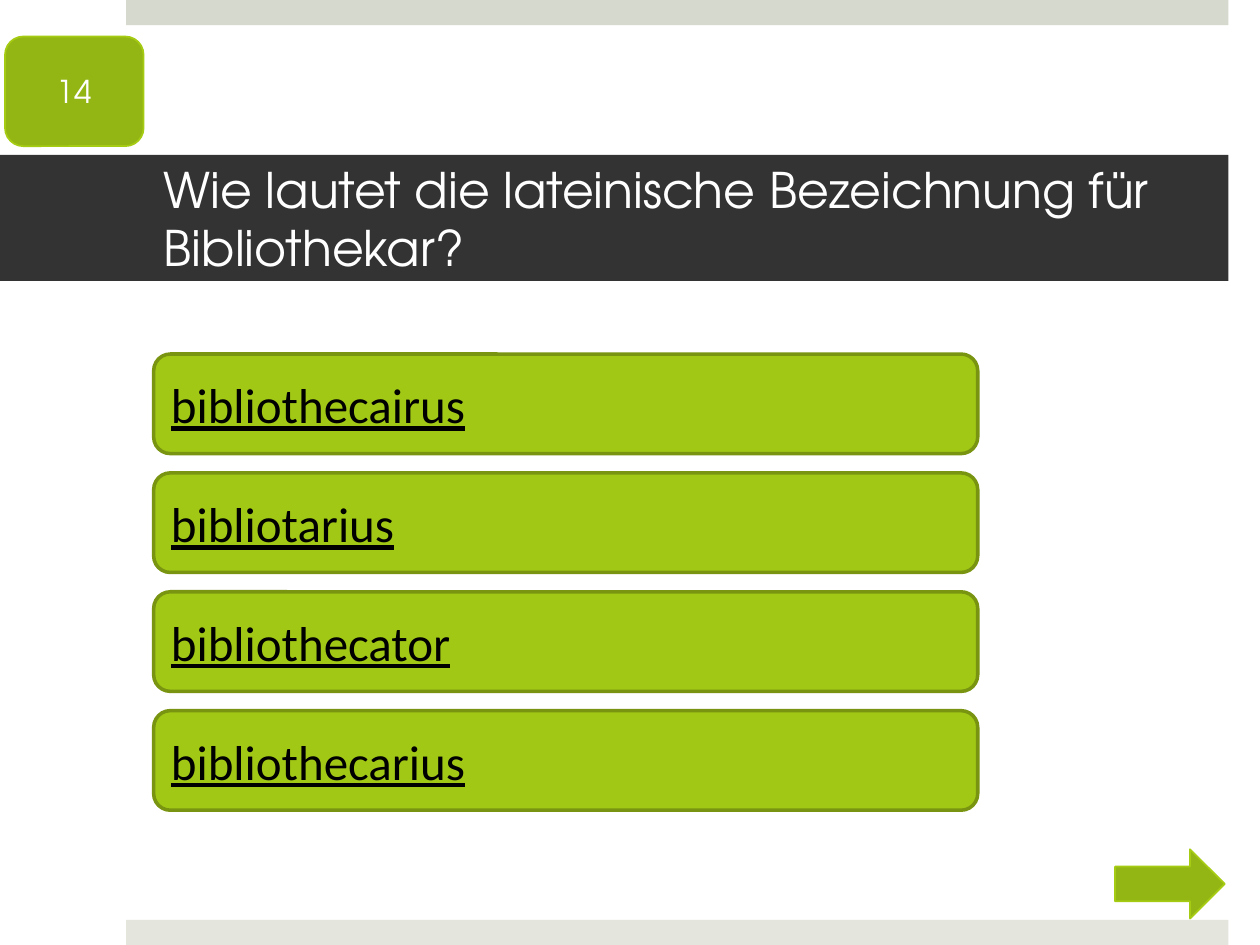
import pptx
import pptx.util
from dataclasses import dataclass
from pptx.dml.color import RGBColor
from pptx.enum.shapes import MSO_SHAPE
from pptx.enum.text import MSO_ANCHOR, MSO_AUTO_SIZE, PP_ALIGN

Inches = pptx.util.Inches
Pt = pptx.util.Pt


@dataclass(frozen=True)
class Theme:
    top_bar: str = "D6D9CD"
    bottom_bar: str = "E4E6DE"
    title_band: str = "333333"
    answer_fill: str = "A2C816"
    answer_line: str = "789410"
    accent_fill: str = "93B614"
    accent_line: str = "A5CC12"
    light: str = "FFFFFF"
    dark: str = "000000"
    heading_font: str = "TeX Gyre Adventor"
    body_font: str = "Calibri"
    large: int = 28
    small: int = 18


class QuizSlide:
    """Holds the theme and the slide being built."""

    def __init__(self, prs, theme):
        self.theme = theme
        self.slide = prs.slides.add_slide(prs.slide_layouts[5])

    def fill(self, sp, color):
        sp.fill.solid()
        sp.fill.fore_color.rgb = RGBColor.from_string(color)

    def set_text(self, sp, text, color, align=PP_ALIGN.LEFT, **font):
        tf = sp.text_frame
        frame = {"word_wrap": True, "auto_size": MSO_AUTO_SIZE.NONE,
                 "vertical_anchor": MSO_ANCHOR.MIDDLE}
        for name, value in frame.items():
            setattr(tf, name, value)
        p = tf.paragraphs[0]
        p.alignment = align
        r = p.add_run()
        r.text = text
        for name, value in font.items():
            setattr(r.font, name, value)
        r.font.color.rgb = RGBColor.from_string(color)

    def shape(self, kind, box, color, line=None, width=1):
        sp = self.slide.shapes.add_shape(kind, *map(Inches, box))
        sp.shadow.inherit = False
        self.fill(sp, color)
        if line:
            sp.line.color.rgb = RGBColor.from_string(line)
            sp.line.width = Pt(width)
        else:
            sp.line.fill.background()
        return sp

    def bar(self, top, color):
        self.shape(MSO_SHAPE.RECTANGLE, (1, top, 8.75, 0.2), color)

    def title(self, text):
        t = self.theme
        sp = self.slide.shapes.title
        sp.left, sp.top, sp.width, sp.height = map(Inches, (0, 1.23, 9.75, 1))
        self.fill(sp, t.title_band)
        margins = {"left": 1.3, "top": 0.05, "right": 0.3, "bottom": 0.05}
        for side, value in margins.items():
            setattr(sp.text_frame, f"margin_{side}", Inches(value))
        self.set_text(sp, text, t.light, name=t.heading_font, size=Pt(t.large))

    def answer(self, top, text):
        t = self.theme
        sp = self.shape(MSO_SHAPE.ROUNDED_RECTANGLE, (1.22, top, 6.54, 0.79),
                        t.answer_fill, t.answer_line, 2)
        self.set_text(sp, text, t.dark, name=t.body_font, size=Pt(t.large),
                      underline=True)

    def badge(self, text):
        t = self.theme
        sp = self.shape(MSO_SHAPE.ROUNDED_RECTANGLE, (0.04, 0.29, 1.1, 0.87),
                        t.accent_fill, t.accent_line)
        self.set_text(sp, text, t.light, PP_ALIGN.CENTER,
                      name=t.heading_font, size=Pt(t.small))

    def next_arrow(self):
        self.shape(MSO_SHAPE.RIGHT_ARROW, (8.85, 6.74, 0.87, 0.55),
                   self.theme.accent_fill, self.theme.accent_line)


def main():
    prs = pptx.Presentation()
    prs.slide_width, prs.slide_height = Inches(10), Inches(7.5)
    theme = Theme()
    s = QuizSlide(prs, theme)
    s.bar(0, theme.top_bar)
    s.bar(7.3, theme.bottom_bar)
    s.title("Wie lautet die lateinische Bezeichnung für Bibliothekar?")

    answers = ["bibliothecairus", "bibliotarius", "bibliothecator", "bibliothecarius"]
    first_top, last_top = 2.81, 5.64
    pitch = (last_top - first_top) / (len(answers) - 1)
    for i, text in enumerate(answers):
        s.answer(first_top + i * pitch, text)

    s.badge("14")
    s.next_arrow()
    prs.save("out.pptx")


if __name__ == "__main__":
    main()
